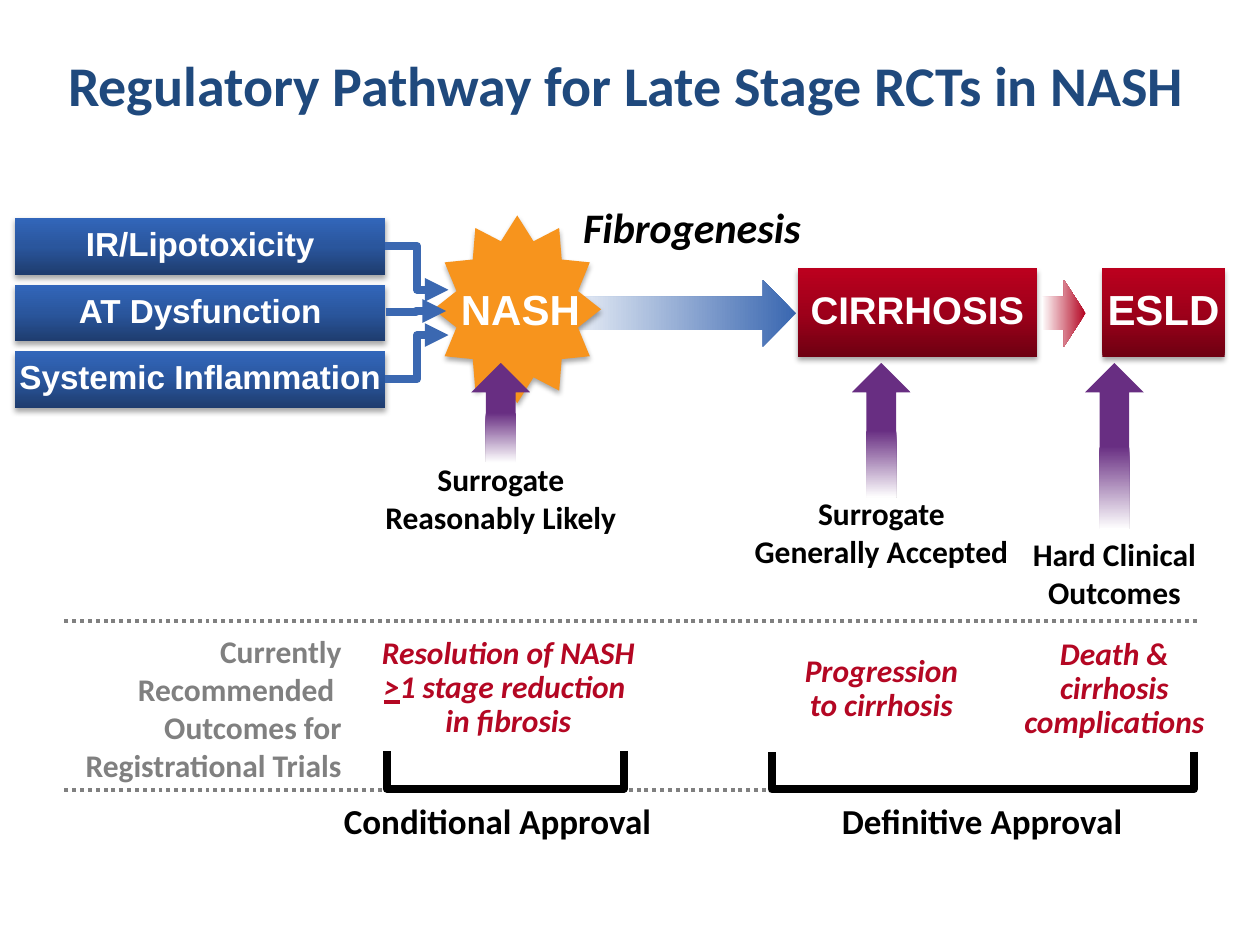
from lxml.etree import SubElement as Sub
from pptx import Presentation
from pptx.dml.color import RGBColor as RGB
from pptx.enum.dml import MSO_LINE as Dash
from pptx.enum.shapes import MSO_CONNECTOR as Link, MSO_SHAPE as Form
from pptx.enum.text import MSO_ANCHOR as Anchor, MSO_AUTO_SIZE as Auto, PP_ALIGN as Align
from pptx.oxml.ns import qn
from pptx.util import Pt

WHITE = RGB(0xFF, 0xFF, 0xFF)
BLACK = RGB(0, 0, 0)
GRAY = RGB(0x80, 0x80, 0x80)
NAVY = RGB(0x1F, 0x49, 0x7D)
BLUE = RGB(0x3B, 0x68, 0xB1)
RED = RGB(0xB4, 0x07, 0x23)
PURPLE = RGB(0x68, 0x2E, 0x82)
ORANGE = RGB(0xF7, 0x94, 0x1D)
BLUES = [(0, RGB(0x1E, 0x3C, 0x6E)), (50, RGB(0x2A, 0x56, 0x9D)), (100, RGB(0x32, 0x66, 0xBA))]
REDS = [(0, RGB(0x6F, 0, 0x12)), (50, RGB(0x9E, 0, 0x1A)), (100, RGB(0xBB, 0, 0x1E))]


def style(frame, size, color, font="Calibri", italic=False, align=Align.CENTER, space=None):
    """Format every paragraph and run of a text frame."""
    for para in frame.paragraphs:
        para.alignment = align
        if space:
            para.line_spacing = space
        for run in para.runs:
            face = run.font
            face.name, face.size, face.bold, face.italic = font, Pt(size), True, italic
            face.color.rgb = color


def label(slide, text, area, size, color, wrap=False, **looks):
    """Add a text box and return its frame."""
    frame = slide.shapes.add_textbox(*map(Pt, area)).text_frame
    frame.text = text
    frame.word_wrap = wrap
    frame.auto_size = Auto.SHAPE_TO_FIT_TEXT
    style(frame, size, color, **looks)
    return frame


def shade(shape, stops, angle):
    """Fill a shape with a linear gradient."""
    shape.fill.gradient()
    grad = shape._element.spPr.find(qn("a:gradFill"))
    for child in list(grad):
        grad.remove(child)
    steps = Sub(grad, qn("a:gsLst"))
    for spot, color in stops:
        stop = Sub(steps, qn("a:gs"), pos=str(spot * 1000))
        Sub(stop, qn("a:srgbClr"), val=str(color))
    Sub(grad, qn("a:lin"), ang=str(angle * 60000), scaled="0")


def cast(shape):
    """Give a shape a soft shadow below it."""
    glow = shape._element.spPr.find(qn("a:effectLst"))
    drop = Sub(glow, qn("a:outerShdw"), blurRad=str(Pt(3.1)), dist=str(Pt(1.8)),
               dir="5400000", algn="ctr", rotWithShape="0")
    tint = Sub(drop, qn("a:srgbClr"), val=str(BLACK))
    Sub(tint, qn("a:alpha"), val="35000")


def figure(slide, form, area):
    """Add a preset shape with no line and no shadow."""
    shape = slide.shapes.add_shape(form, *map(Pt, area))
    shape.shadow.inherit = False
    shape.line.fill.background()
    return shape


def panel(slide, text, area, stops, size):
    """Add a shaded box with a caption."""
    shape = figure(slide, Form.RECTANGLE, area)
    shade(shape, stops, 270)
    cast(shape)
    frame = shape.text_frame
    frame.text = text
    frame.word_wrap = False
    frame.vertical_anchor = Anchor.MIDDLE
    style(frame, size, WHITE, font="Arial", space=0.85)


def arrow(slide, area, color):
    """Add a block arrow that fades in to the right."""
    shape = figure(slide, Form.RIGHT_ARROW, area)
    shade(shape, [(1, color), (100, WHITE)], 180)


def pointer(slide, left, height):
    """Add a purple block arrow that points up."""
    shape = figure(slide, Form.DOWN_ARROW, (left, 207.4, 33.8, height))
    shape._element.spPr.xfrm.set("flipV", "1")
    shade(shape, [(50, PURPLE), (100, WHITE)], 270)


def line(slide, kind, ends, color, width):
    """Add a connector without a shadow and return it."""
    wire = slide.shapes.add_connector(kind, *map(Pt, ends))
    wire.line.color.rgb = color
    wire.line.width = Pt(width)
    Sub(wire._element.spPr, qn("a:effectLst"))
    return wire


def bracket(slide, area):
    """Add a square bracket that opens upward."""
    shape = figure(slide, Form.LEFT_BRACKET, area)
    shape.adjustments[0] = 0
    shape.rotation = 270
    shape.fill.background()
    shape.line.color.rgb = BLACK
    shape.line.width = Pt(4.5)


def disease(slide):
    """Draw the stages of disease from left to right."""
    panel(slide, "ESLD", (630, 153.4, 69.8, 50.4), REDS, 24)
    arrow(slide, (595.4, 160, 25, 38), RED)
    arrow(slide, (311, 160, 144, 38), BLUE)
    star = figure(slide, Form.STAR_12_POINT, (247.7, 123.1, 95.8, 107.3))
    star.fill.solid()
    star.fill.fore_color.rgb = ORANGE
    cast(star)
    label(slide, "NASH", (256.3, 158.4, 83.5, 36), 24, WHITE, font="Arial", align=Align.LEFT)
    label(slide, "Fibrogenesis", (326.2, 111.6, 139.7, 36), 24, BLACK, italic=True, align=Align.LEFT)
    panel(slide, "CIRRHOSIS", (455.8, 153.4, 136.8, 50.4), REDS, 22)
    causes = [("IR/Lipotoxicity", 256.3, 165.6), ("AT Dysfunction", 254.9, 177.8),
              ("Systemic Inflammation", 256.3, 191.5)]
    for row, (text, right, low) in enumerate(causes):
        top = 124.6 + 38.1 * row
        panel(slide, text, (8.6, top, 211.7, 32.4), BLUES, 19)
        wire = line(slide, Link.ELBOW, (220.3, top + 15.9, right, low), BLUE, 4.5)
        Sub(wire.line._get_or_add_ln(), qn("a:tailEnd"), type="triangle")


def proof(slide):
    """Draw the kinds of evidence below the stages."""
    kinds = [("Surrogate\nReasonably Likely", (212.4, 259.2, 147.6, 51.1), 269.3, 56.9),
             ("Surrogate\nGenerally Accepted", (423.4, 278.6, 160.6, 51.1), 486.7, 77),
             ("Hard Clinical\nOutcomes", (582.5, 302.4, 108.7, 51.1), 619.9, 95)]
    for text, area, left, height in kinds:
        pointer(slide, left, height)
        label(slide, text, area, 18, BLACK)


def outcomes(slide):
    """Draw the recommended outcomes and approval types."""
    for top in (355, 451.4):
        line(slide, Link.STRAIGHT, (684, top, 36, top), GRAY, 2.25).line.dash_style = Dash.ROUND_DOT
    label(slide, "Currently Recommended \vOutcomes for Registrational Trials",
          (28.8, 357.8, 173.5, 94.3), 18, GRAY, wrap=True, align=Align.RIGHT)
    looks = dict(size=18, color=RED, italic=True, space=0.9)
    goal = label(slide, "Resolution of NASH\n>\nin fibrosis", (210.2, 360.7, 160.6, 66.2), **looks)
    para = goal.paragraphs[1]
    para.runs[0].font.underline = True
    para.add_run().text = "1 stage reduction "
    style(goal, **looks)
    label(slide, "Progression\nto cirrhosis", (452.2, 370.8, 103, 46.8), **looks)
    label(slide, "Death &\ncirrhosis\ncomplications", (577.4, 361.4, 118.8, 66.2), **looks)
    bracket(slide, (277.9, 372.2, 21.6, 135.4))
    bracket(slide, (550.8, 319.7, 21.6, 241.2))
    label(slide, "Conditional Approval", (188.6, 453.6, 191.5, 31.7), 20, BLACK)
    label(slide, "Definitive Approval", (473, 453.6, 176.4, 31.7), 20, BLACK)


def main():
    """Build and save the slide."""
    deck = Presentation()
    deck.slide_width, deck.slide_height = Pt(720), Pt(540)
    slide = deck.slides.add_slide(deck.slide_layouts[6])
    title = label(slide, "Regulatory Pathway for Late Stage RCTs in NASH",
                  (20.2, 9.4, 675.4, 77.8), 32, NAVY, wrap=True)
    title.auto_size = Auto.NONE
    title.vertical_anchor = Anchor.MIDDLE
    disease(slide)
    proof(slide)
    outcomes(slide)
    deck.save("out.pptx")


if __name__ == "__main__":
    main()
